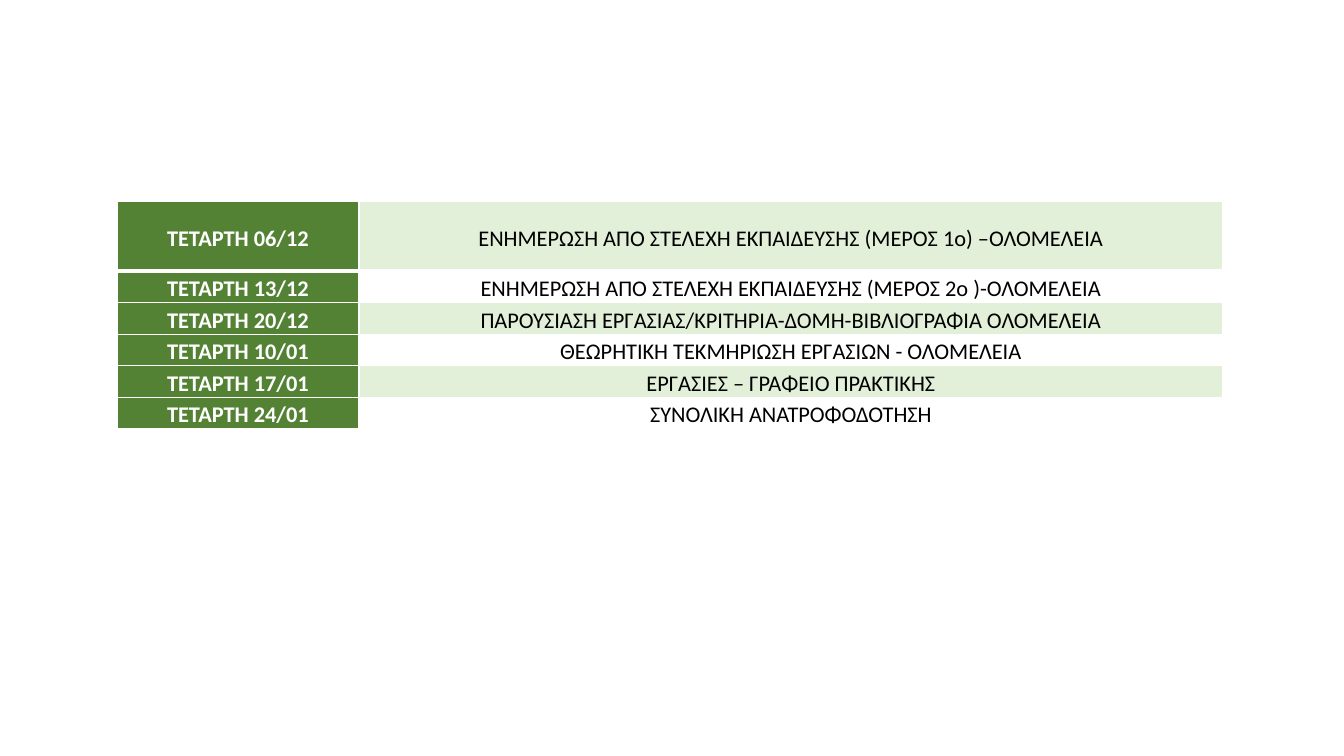
from lxml.etree import SubElement
from pptx import Presentation
from pptx.dml.color import RGBColor
from pptx.enum.text import MSO_ANCHOR, PP_ALIGN
from pptx.oxml.ns import qn
from pptx.util import Inches, Pt

SESSIONS = [
    ("ΤΕΤΑΡΤΗ 06/12", "ΕΝΗΜΕΡΩΣΗ ΑΠΟ ΣΤΕΛΕΧΗ ΕΚΠΑΙΔΕΥΣΗΣ (ΜΕΡΟΣ 1ο) –ΟΛΟΜΕΛΕΙΑ"),
    ("ΤΕΤΑΡΤΗ 13/12", "ΕΝΗΜΕΡΩΣΗ ΑΠΟ ΣΤΕΛΕΧΗ ΕΚΠΑΙΔΕΥΣΗΣ (ΜΕΡΟΣ 2ο )-ΟΛΟΜΕΛΕΙΑ"),
    ("ΤΕΤΑΡΤΗ 20/12", "ΠΑΡΟΥΣΙΑΣΗ ΕΡΓΑΣΙΑΣ/ΚΡΙΤΗΡΙΑ-ΔΟΜΗ-ΒΙΒΛΙΟΓΡΑΦΙΑ ΟΛΟΜΕΛΕΙΑ"),
    ("ΤΕΤΑΡΤΗ 10/01", "ΘΕΩΡΗΤΙΚΗ ΤΕΚΜΗΡΙΩΣΗ ΕΡΓΑΣΙΩΝ - ΟΛΟΜΕΛΕΙΑ"),
    ("ΤΕΤΑΡΤΗ 17/01", "ΕΡΓΑΣΙΕΣ – ΓΡΑΦΕΙΟ ΠΡΑΚΤΙΚΗΣ"),
    ("ΤΕΤΑΡΤΗ 24/01", "ΣΥΝΟΛΙΚΗ ΑΝΑΤΡΟΦΟΔΟΤΗΣΗ"),
]
COL_WIDTHS = [2.4, 8.57]
ROW_HEIGHTS = [0.69, 0.27, 0.27, 0.22, 0.27, 0.27]

GREEN = RGBColor(0x54, 0x82, 0x35)
PALE = RGBColor(0xE2, 0xF0, 0xD9)
WHITE = RGBColor(0xFF, 0xFF, 0xFF)
BLACK = RGBColor(0, 0, 0)

CELL = {
    "vertical_anchor": MSO_ANCHOR.MIDDLE,
    "margin_left": Inches(0.05),
    "margin_right": Inches(0.05),
    "margin_top": 0,
    "margin_bottom": 0,
}
PARAGRAPH = {"alignment": PP_ALIGN.CENTER, "line_spacing": 1.15, "space_after": Pt(10)}
FONT = {"name": "Calibri", "size": Pt(16)}


def set_format(obj, values):
    """Set each named attribute on obj."""
    for name, value in values.items():
        setattr(obj, name, value)


def set_borders(cell, widths):
    """Give the cell white borders, with widths in points by side."""
    tcPr = cell._tc.get_or_add_tcPr()
    for i, (side, width) in enumerate(widths.items()):
        ln = SubElement(tcPr, qn(f"a:ln{side}"), w=str(Pt(width)))
        fill = SubElement(ln, qn("a:solidFill"))
        SubElement(fill, qn("a:srgbClr"), val=str(WHITE))
        tcPr.insert(i, ln)


def fill_cell(cell, text, row, col):
    """Write and format one cell of the schedule."""
    is_date = col == 0
    set_format(cell, CELL)
    p = cell.text_frame.paragraphs[0]
    set_format(p, PARAGRAPH)
    r = p.add_run()
    r.text = text
    set_format(r.font, {**FONT, "bold": is_date})
    r.font.color.rgb = WHITE if is_date else BLACK
    cell.fill.solid()
    cell.fill.fore_color.rgb = GREEN if is_date else (WHITE if row % 2 else PALE)
    set_borders(cell, {"L": 1, "R": 1, "T": 3 if row == 1 else 1, "B": 1 if row else 3})


def main():
    """Build the schedule slide."""
    prs = Presentation()
    prs.slide_width, prs.slide_height = Inches(13.33), Inches(7.5)
    s = prs.slides.add_slide(prs.slide_layouts[6])
    table = s.shapes.add_table(
        len(SESSIONS), len(COL_WIDTHS), Inches(1.16), Inches(2),
        Inches(sum(COL_WIDTHS)), Inches(sum(ROW_HEIGHTS)),
    ).table
    for column, width in zip(table.columns, COL_WIDTHS):
        column.width = Inches(width)
    for i, (height, session) in enumerate(zip(ROW_HEIGHTS, SESSIONS)):
        table.rows[i].height = Inches(height)
        for j, text in enumerate(session):
            fill_cell(table.cell(i, j), text, i, j)
    prs.save("out.pptx")


if __name__ == "__main__":
    main()
